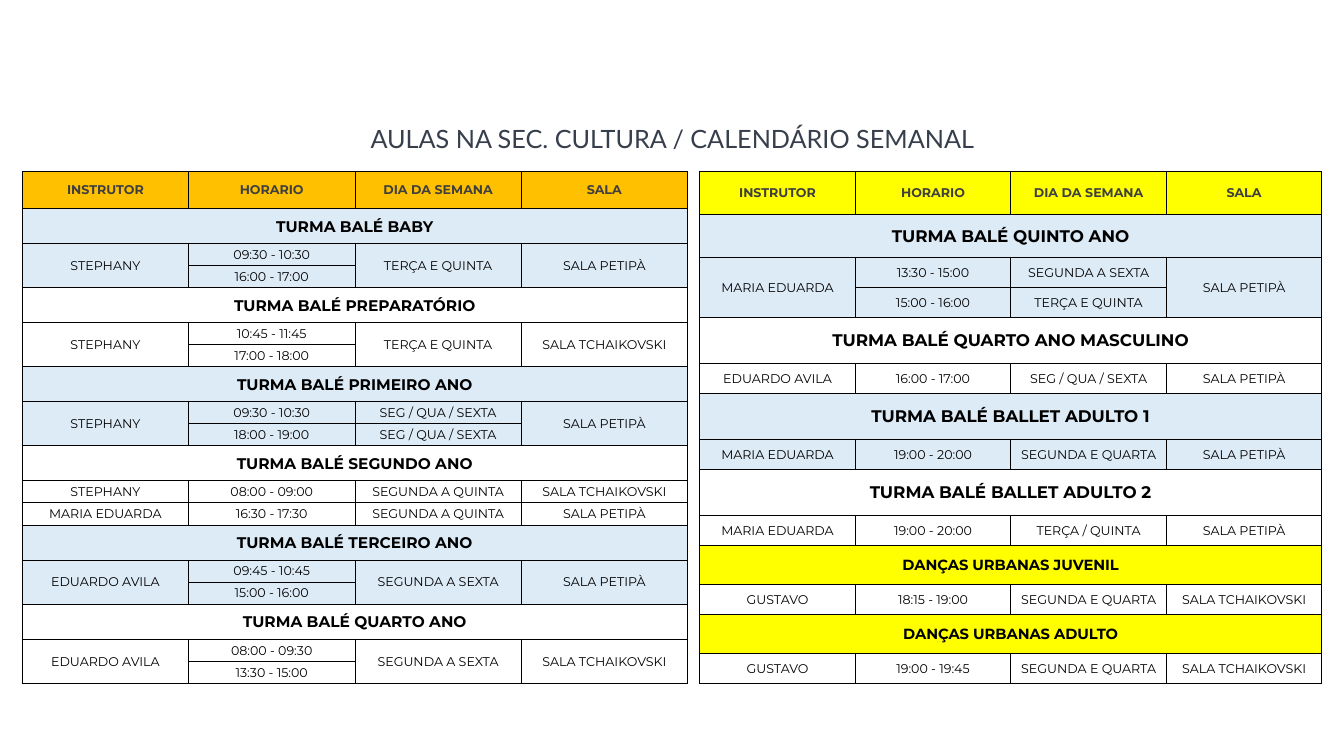
from dataclasses import dataclass

from lxml.etree import SubElement
from pptx import Presentation
from pptx.dml.color import RGBColor
from pptx.enum.text import MSO_ANCHOR as Anchor, MSO_AUTO_SIZE as AutoSize, PP_ALIGN as Align
from pptx.oxml.ns import qn
from pptx.util import Inches, Pt


@dataclass(frozen=True)
class Theme:
    ink: str = "000000"
    title_ink: str = "373F4C"
    header_ink: str = "3F3F3F"
    orange: str = "FFC000"
    yellow: str = "FFFF00"
    blue: str = "DDEBF7"
    white: str = "FFFFFF"
    title_font: str = "Lato"
    table_font: str = "Montserrat"
    title_size: float = 18
    class_size: float = 11
    large_class_size: float = 12
    dance_size: float = 10.5
    detail_size: float = 9
    thin: float = 0.5
    thick: float = 1


THEME = Theme()


@dataclass(frozen=True)
class Area:
    """Left, top, width and height as percentages of the slide."""
    left: float
    top: float
    width: float
    height: float


@dataclass(frozen=True)
class Style:
    fill: str
    size: float
    bold: bool = False
    ink: str = THEME.ink
    edges: tuple[float, float, float, float] = (THEME.thin,) * 4


@dataclass(frozen=True)
class Course:
    """A class and its lessons; an empty entry continues the cell above."""
    name: str
    band: Style
    detail: Style
    height: float
    lessons: list[tuple[str, str, str, str]]


@dataclass(frozen=True)
class Timetable:
    area: Area
    header: Style
    header_height: float
    lesson_height: float
    courses: list[Course]


SLIDE_WIDTH, SLIDE_HEIGHT = Inches(13.33), Inches(7.5)
PLAIN_TABLE = "{2D5ABB26-0587-4C30-8999-92F81FD0307C}"
HEADINGS = ("INSTRUTOR", "HORARIO", "DIA DA SEMANA", "SALA")
TITLE_AREA = Area(17.7, 15.9, 64.67, 4.8)

BAND_EDGES = (THEME.thick, THEME.thin, THEME.thick, THEME.thin)
DANCE_EDGES = (THEME.thick,) * 4
BLUE_BAND, WHITE_BAND, LARGE_BLUE, LARGE_WHITE = (
    Style(fill, size, True, THEME.ink, BAND_EDGES)
    for size in (THEME.class_size, THEME.large_class_size)
    for fill in (THEME.blue, THEME.white))
DANCE_BAND = Style(THEME.yellow, THEME.dance_size, True, THEME.ink, DANCE_EDGES)
BLUE, WHITE = (Style(fill, THEME.detail_size) for fill in (THEME.blue, THEME.white))

TIMETABLES = [
    Timetable(
        Area(1.65, 22.67, 49.51, 67.73),
        Style(THEME.orange, THEME.detail_size, True, THEME.header_ink), 0.37, 0.22, [
            Course("TURMA BALÉ BABY", BLUE_BAND, BLUE, 0.35, [
                ("STEPHANY", "09:30 - 10:30", "TERÇA E QUINTA", "SALA PETIPÀ"),
                ("", "16:00 - 17:00", "", "")]),
            Course("TURMA BALÉ PREPARATÓRIO", WHITE_BAND, WHITE, 0.35, [
                ("STEPHANY", "10:45 - 11:45", "TERÇA E QUINTA", "SALA TCHAIKOVSKI"),
                ("", "17:00 - 18:00", "", "")]),
            Course("TURMA BALÉ PRIMEIRO ANO", BLUE_BAND, BLUE, 0.35, [
                ("STEPHANY", "09:30 - 10:30", "SEG / QUA / SEXTA", "SALA PETIPÀ"),
                ("", "18:00 - 19:00", "SEG / QUA / SEXTA", "")]),
            Course("TURMA BALÉ SEGUNDO ANO", WHITE_BAND, WHITE, 0.35, [
                ("STEPHANY", "08:00 - 09:00", "SEGUNDA A QUINTA", "SALA TCHAIKOVSKI"),
                ("MARIA EDUARDA", "16:30 - 17:30", "SEGUNDA A QUINTA", "SALA PETIPÀ")]),
            Course("TURMA BALÉ TERCEIRO ANO", BLUE_BAND, BLUE, 0.35, [
                ("EDUARDO AVILA", "09:45 - 10:45", "SEGUNDA A SEXTA", "SALA PETIPÀ"),
                ("", "15:00 - 16:00", "", "")]),
            Course("TURMA BALÉ QUARTO ANO", WHITE_BAND, WHITE, 0.35, [
                ("EDUARDO AVILA", "08:00 - 09:30", "SEGUNDA A SEXTA", "SALA TCHAIKOVSKI"),
                ("", "13:30 - 15:00", "", "")]),
        ]),
    Timetable(
        Area(52.06, 22.67, 46.29, 67.73),
        Style(THEME.yellow, THEME.detail_size, True, THEME.header_ink,
              (THEME.thin, THEME.thick, THEME.thin, THEME.thin)), 0.43, 0.3, [
            Course("TURMA BALÉ QUINTO ANO", LARGE_BLUE, BLUE, 0.43, [
                ("MARIA EDUARDA", "13:30 - 15:00", "SEGUNDA A SEXTA", "SALA PETIPÀ"),
                ("", "15:00 - 16:00", "TERÇA E QUINTA", "")]),
            Course("TURMA BALÉ QUARTO ANO MASCULINO", LARGE_WHITE, WHITE, 0.46, [
                ("EDUARDO AVILA", "16:00 - 17:00", "SEG / QUA / SEXTA", "SALA PETIPÀ")]),
            Course("TURMA BALÉ BALLET ADULTO 1", LARGE_BLUE, BLUE, 0.46, [
                ("MARIA EDUARDA", "19:00 - 20:00", "SEGUNDA E QUARTA", "SALA PETIPÀ")]),
            Course("TURMA BALÉ BALLET ADULTO 2", LARGE_WHITE, WHITE, 0.46, [
                ("MARIA EDUARDA", "19:00 - 20:00", "TERÇA / QUINTA", "SALA PETIPÀ")]),
            Course("DANÇAS URBANAS JUVENIL", DANCE_BAND, WHITE, 0.39, [
                ("GUSTAVO", "18:15 - 19:00", "SEGUNDA E QUARTA", "SALA TCHAIKOVSKI")]),
            Course("DANÇAS URBANAS ADULTO", DANCE_BAND, WHITE, 0.39, [
                ("GUSTAVO", "19:00 - 19:45", "SEGUNDA E QUARTA", "SALA TCHAIKOVSKI")]),
        ]),
]


def place(area: Area) -> tuple[int, int, int, int]:
    """Turn percentages into slide lengths."""
    return (round(SLIDE_WIDTH * area.left / 100), round(SLIDE_HEIGHT * area.top / 100),
            round(SLIDE_WIDTH * area.width / 100), round(SLIDE_HEIGHT * area.height / 100))


def format_text(frame, text: str, font: str, size: float, ink: str, bold: bool = False) -> None:
    frame.text = text
    para = frame.paragraphs[0]
    para.alignment = Align.CENTER
    for span in para.runs:
        span.font.name = font
        span.font.size = Pt(size)
        span.font.bold = bold
        span.font.color.rgb = RGBColor.from_string(ink)


def draw_edges(cell, widths: tuple[float, ...]) -> None:
    properties = cell._tc.get_or_add_tcPr()
    for position, (side, width) in enumerate(zip("LTRB", widths)):
        line = SubElement(properties, qn(f"a:ln{side}"), w=str(Pt(width)))
        fill = SubElement(line, qn("a:solidFill"))
        SubElement(fill, qn("a:srgbClr"), val=THEME.ink)
        # The schema wants left, right, top, bottom, all ahead of the fill.
        properties.insert(1 if side == "R" else position, line)


def fill_row(table, row: int, texts: tuple[str, ...], style: Style) -> None:
    for column, text in enumerate(texts):
        cell = table.cell(row, column)
        cell.fill.solid()
        cell.fill.fore_color.rgb = RGBColor.from_string(style.fill)
        if not text:
            continue
        cell.vertical_anchor = Anchor.MIDDLE
        cell.margin_left = cell.margin_top = cell.margin_right = Inches(0.01)
        cell.margin_bottom = 0
        format_text(cell.text_frame, text, THEME.table_font, style.size, style.ink, style.bold)
        draw_edges(cell, style.edges)


def draw_timetable(page, timetable: Timetable) -> None:
    rows = [(HEADINGS, timetable.header, timetable.header_height)]
    for course in timetable.courses:
        rows.append(((course.name, "", "", ""), course.band, course.height))
        rows += [(lesson, course.detail, timetable.lesson_height) for lesson in course.lessons]

    left, top, width, height = place(timetable.area)
    table = page.shapes.add_table(len(rows), len(HEADINGS), left, top, width, height).table
    table.first_row = table.horz_banding = False
    table._tbl.tblPr.find(qn("a:tableStyleId")).text = PLAIN_TABLE

    total = sum(share for _, _, share in rows)
    for index, (texts, style, share) in enumerate(rows):
        table.rows[index].height = round(height * share / total)
        fill_row(table, index, texts, style)
        if not any(texts[1:]):
            table.cell(index, 0).merge(table.cell(index, len(HEADINGS) - 1))
            continue
        for column, text in enumerate(texts):
            if not text:
                table.cell(index - 1, column).merge(table.cell(index, column))


def draw_title(page) -> None:
    box = page.shapes.title
    box.left, box.top, box.width, box.height = place(TITLE_AREA)
    frame = box.text_frame
    frame.margin_left = frame.margin_top = frame.margin_right = frame.margin_bottom = Inches(0.03)
    frame.word_wrap = True
    frame.auto_size = AutoSize.SHAPE_TO_FIT_TEXT
    frame.vertical_anchor = Anchor.TOP
    format_text(frame, "AULAS NA SEC. CULTURA / CALENDÁRIO SEMANAL",
                THEME.title_font, THEME.title_size, THEME.title_ink)


def main() -> None:
    deck = Presentation()
    deck.slide_width, deck.slide_height = SLIDE_WIDTH, SLIDE_HEIGHT
    page = deck.slides.add_slide(deck.slide_layouts[5])
    draw_title(page)
    for timetable in TIMETABLES:
        draw_timetable(page, timetable)
    deck.save("out.pptx")


if __name__ == "__main__":
    main()
